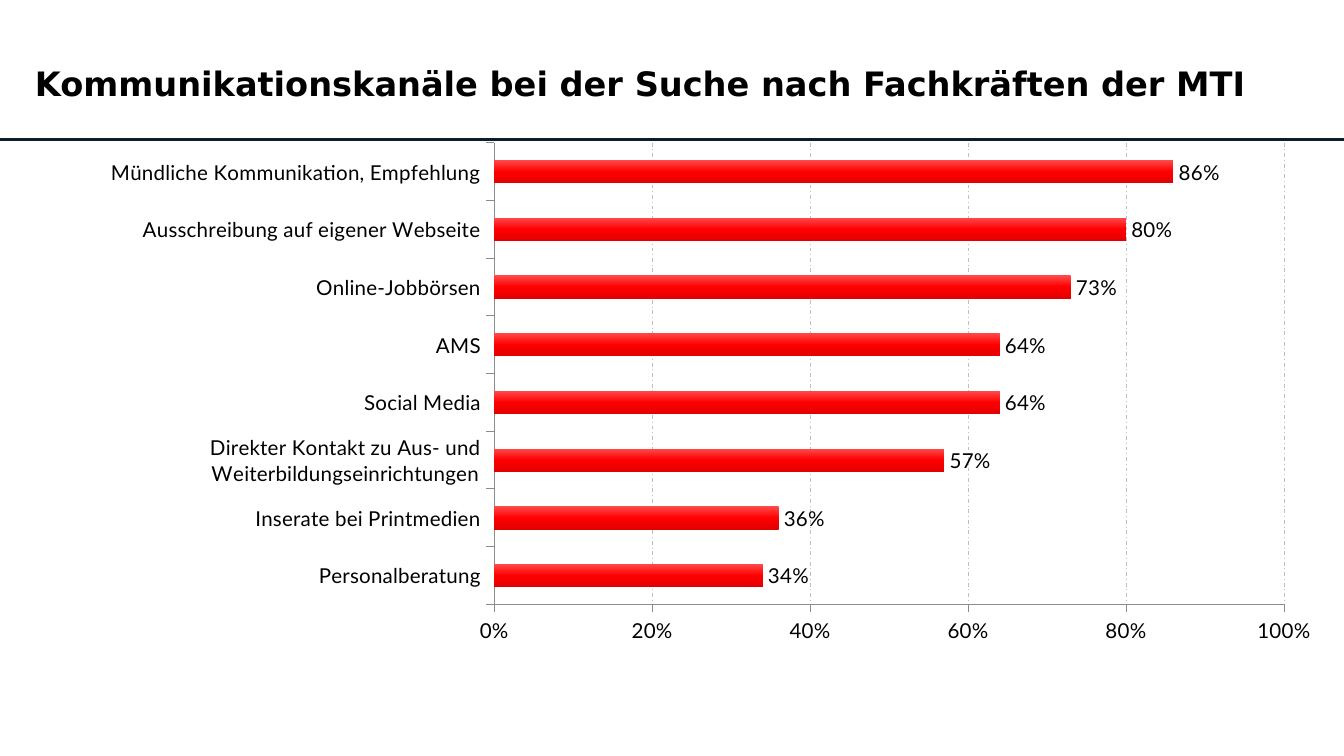
"""Build a slide with a bar chart of recruiting channels for MTI specialists."""
from pptx import Presentation
from pptx.chart.data import CategoryChartData
from pptx.dml.color import RGBColor
from pptx.enum.chart import XL_CHART_TYPE, XL_LABEL_POSITION, XL_TICK_MARK
from pptx.enum.dml import MSO_LINE
from pptx.enum.shapes import MSO_CONNECTOR
from pptx.enum.text import MSO_ANCHOR, MSO_AUTO_SIZE, PP_ALIGN
from pptx.oxml import parse_xml
from pptx.oxml.ns import nsdecls
from pptx.util import Inches, Pt

BLACK = RGBColor(0x00, 0x00, 0x00)
NAVY = RGBColor(0x0C, 0x1D, 0x2E)
AXIS_GRAY = RGBColor(0x8C, 0x8C, 0x8C)
GRID_GRAY = RGBColor(0xBF, 0xBF, 0xBF)
BAR_STOPS = [
    (0, RGBColor(0xFF, 0x4B, 0x4B)),
    (50, RGBColor(0xFF, 0x00, 0x00)),
    (100, RGBColor(0xE3, 0x00, 0x00)),
]
CHANNELS = [
    ("Personalberatung", 0.34),
    ("Inserate bei Printmedien", 0.36),
    ("Direkter Kontakt zu Aus- und Weiterbildungseinrichtungen", 0.57),
    ("Social Media", 0.64),
    ("AMS", 0.64),
    ("Online-Jobbörsen", 0.73),
    ("Ausschreibung auf eigener Webseite", 0.80),
    ("Mündliche Kommunikation, Empfehlung", 0.86),
]


def style_font(font, name, size):
    font.name = name
    font.size = Pt(size)
    font.color.rgb = BLACK


presentation = Presentation()
presentation.slide_width = Inches(10)
presentation.slide_height = Inches(10) * 9 // 16
slide = presentation.slides.add_slide(presentation.slide_layouts[5])

rule = slide.shapes.add_connector(
    MSO_CONNECTOR.STRAIGHT, Inches(10), Inches(1.04), Inches(0), Inches(1.04)
)
rule.line.color.rgb = NAVY
rule.line.width = Pt(1.5)
rule._element.spPr.append(parse_xml(f"<a:effectLst {nsdecls('a')}/>"))

title = slide.shapes.title
title.left, title.top = Inches(0.16), Inches(0.42)
title.width, title.height = Inches(9.7), Inches(0.4)
title.text_frame.text = "Kommunikationskanäle bei der Suche nach Fachkräften der MTI"
title.text_frame.word_wrap = True
title.text_frame.auto_size = MSO_AUTO_SIZE.NONE
title.text_frame.vertical_anchor = MSO_ANCHOR.MIDDLE
paragraph = title.text_frame.paragraphs[0]
paragraph.alignment = PP_ALIGN.LEFT
paragraph.space_before = Pt(0)
title_font = paragraph.runs[0].font
style_font(title_font, "DejaVu Sans", 18)
title_font.bold = True

chart_data = CategoryChartData(number_format="0%")
chart_data.categories = [name for name, share in CHANNELS]
chart_data.add_series("Series 1", [share for name, share in CHANNELS])
chart = slide.shapes.add_chart(
    XL_CHART_TYPE.BAR_CLUSTERED,
    Inches(0), Inches(0.93), Inches(9.86), Inches(3.9), chart_data,
).chart
chart.has_legend = False
chart.has_title = False
style_font(chart.font, "Lato", 11)

for axis in (chart.category_axis, chart.value_axis):
    axis.major_tick_mark = XL_TICK_MARK.OUTSIDE
    axis.minor_tick_mark = XL_TICK_MARK.NONE
    axis.format.line.color.rgb = AXIS_GRAY
    axis.format.line.width = Pt(0.5)
    style_font(axis.tick_labels.font, "Lato", 11)

value_axis = chart.value_axis
value_axis.minimum_scale = 0
value_axis.maximum_scale = 1
value_axis.major_unit = 0.2
value_axis.tick_labels.number_format = "0%"
value_axis.tick_labels.number_format_is_linked = False
value_axis.has_major_gridlines = True
grid_line = value_axis.major_gridlines.format.line
grid_line.color.rgb = GRID_GRAY
grid_line.width = Pt(0.5)
grid_line.dash_style = MSO_LINE.DASH_DOT

plot = chart.plots[0]
plot.gap_width = 150
plot.vary_by_categories = False
plot.has_data_labels = True
labels = plot.data_labels
labels.show_value = True
labels.position = XL_LABEL_POSITION.OUTSIDE_END
labels.number_format = "0%"
labels.number_format_is_linked = False
style_font(labels.font, "Lato", 11)

stops = "".join(
    f'<a:gs pos="{position * 1000}"><a:srgbClr val="{color}"/></a:gs>'
    for position, color in BAR_STOPS
)
bar_properties = plot.series[0]._element.get_or_add_spPr()
bar_properties.append(parse_xml(
    f'<a:gradFill {nsdecls("a")} rotWithShape="1"><a:gsLst>{stops}</a:gsLst>'
    '<a:lin ang="5400000" scaled="0"/></a:gradFill>'
))

plot_area = chart._chartSpace.chart.plotArea
for old_layout in plot_area.findall("{*}layout"):
    plot_area.remove(old_layout)
bounds = "".join(
    f'<c:{tag} val="{value}"/>'
    for tag, value in [
        ("layoutTarget", "inner"), ("xMode", "edge"), ("yMode", "edge"),
        ("x", 0.373), ("y", 0.034), ("w", 0.596), ("h", 0.881),
    ]
)
plot_area.insert(0, parse_xml(
    f'<c:layout {nsdecls("c")}><c:manualLayout>{bounds}</c:manualLayout></c:layout>'
))

presentation.save("out.pptx")
